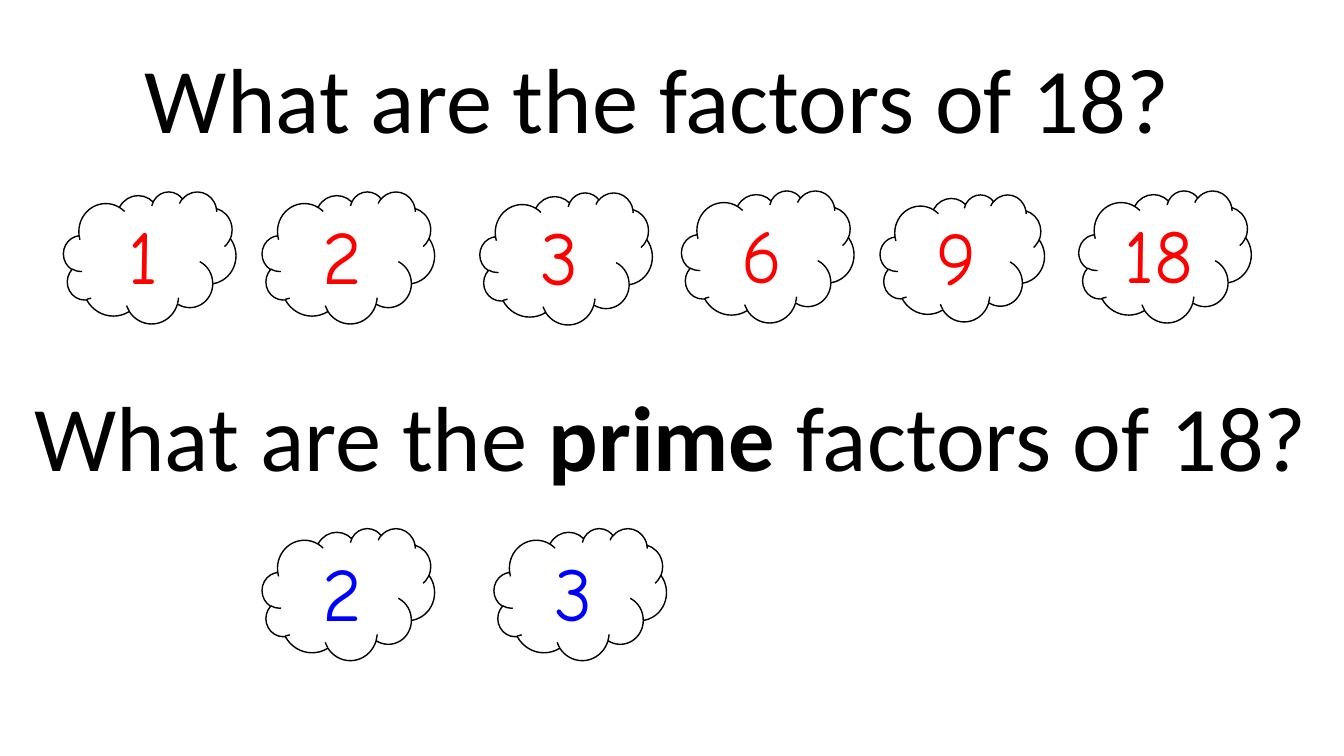
"""Build a slide that asks for the factors and prime factors of 18."""
from dataclasses import dataclass

from pptx import Presentation
from pptx.dml.color import RGBColor
from pptx.enum import shapes, text
from pptx.util import Inches, Pt


@dataclass(frozen=True)
class Theme:
    black: RGBColor = RGBColor(0, 0, 0)
    white: RGBColor = RGBColor(255, 255, 255)
    red: RGBColor = RGBColor(255, 0, 0)
    blue: RGBColor = RGBColor(0, 0, 255)
    ask_font: str = "Calibri"
    num_font: str = "Comic Neue"
    ask_size: int = 66
    num_size: int = 54
    line: int = 1


@dataclass(frozen=True)
class Cloud:
    label: str
    left: float
    top: float
    color: RGBColor
    width: float = 1.71
    height: float = 1.31


@dataclass(frozen=True)
class Part:
    words: str
    bold: bool = False


THEME = Theme()
ASK = [Part("What are the factors of 18? ")]
PRIME = [Part("What are the "), Part("prime", True), Part(" factors of 18? ")]
CLOUDS = [
    Cloud("1", 0.63, 1.9, THEME.red),
    Cloud("2", 2.6, 1.9, THEME.red),
    Cloud("3", 4.76, 1.91, THEME.red),
    Cloud("6", 6.76, 1.89, THEME.red),
    Cloud("9", 8.73, 1.93, THEME.red, 1.63, 1.26),
    Cloud("18", 10.7, 1.89, THEME.red),
    Cloud("2", 2.6, 5.24, THEME.blue),
    Cloud("3", 4.9, 5.24, THEME.blue),
]


def style(run, font: str, size: int, color: RGBColor, bold: bool = False) -> None:
    run.font.name = font
    run.font.size = Pt(size)
    run.font.color.rgb = color
    run.font.bold = bold


def fill_ask(box, parts: list[Part]) -> None:
    frame = box.text_frame
    frame.word_wrap = True
    frame.auto_size = text.MSO_AUTO_SIZE.SHAPE_TO_FIT_TEXT
    frame.vertical_anchor = text.MSO_ANCHOR.TOP
    para = frame.paragraphs[0]
    para.alignment = text.PP_ALIGN.CENTER
    for part in parts:
        run = para.add_run()
        run.text = part.words
        style(run, THEME.ask_font, THEME.ask_size, THEME.black, part.bold)


def draw_cloud(slide, cloud: Cloud) -> None:
    shape = slide.shapes.add_shape(
        shapes.MSO_SHAPE.CLOUD, Inches(cloud.left), Inches(cloud.top),
        Inches(cloud.width), Inches(cloud.height))
    shape.shadow.inherit = False
    shape.fill.solid()
    shape.fill.fore_color.rgb = THEME.white
    shape.line.color.rgb = THEME.black
    shape.line.width = Pt(THEME.line)
    frame = shape.text_frame
    frame.text = cloud.label
    frame.vertical_anchor = text.MSO_ANCHOR.MIDDLE
    para = frame.paragraphs[0]
    para.alignment = text.PP_ALIGN.CENTER
    style(para.runs[0], THEME.num_font, THEME.num_size, cloud.color)


def main() -> None:
    deck = Presentation()
    deck.slide_width = Inches(13.33)
    deck.slide_height = Inches(7.5)
    slide = deck.slides.add_slide(deck.slide_layouts[5])

    title = slide.shapes.title
    title.left, title.top = Inches(0.68), Inches(0.36)
    title.width, title.height = Inches(11.89), Inches(1.21)
    fill_ask(title, ASK)

    prime = slide.shapes.add_textbox(
        Inches(0.18), Inches(3.71), Inches(13.15), Inches(1.21))
    fill_ask(prime, PRIME)

    for cloud in CLOUDS:
        draw_cloud(slide, cloud)
    deck.save("out.pptx")


if __name__ == "__main__":
    main()
